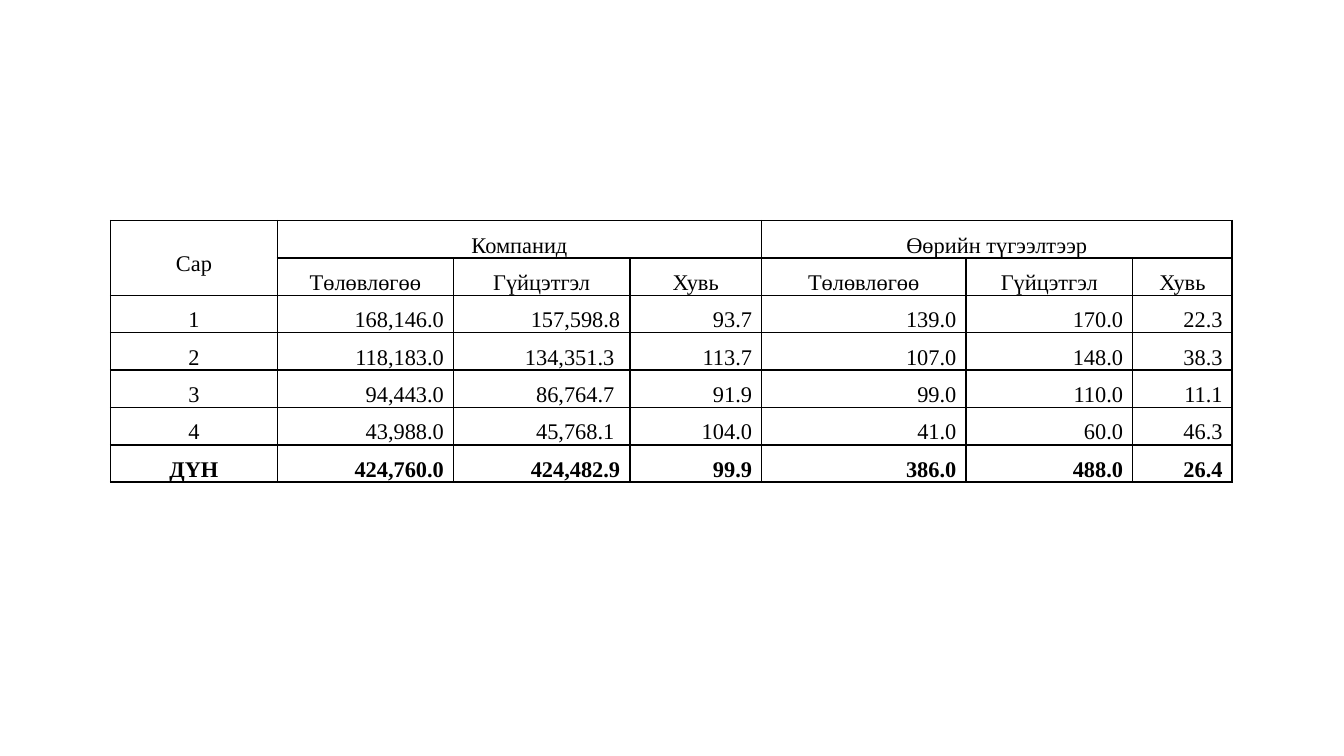
from dataclasses import dataclass

from lxml import etree
from pptx import Presentation
from pptx.dml.color import RGBColor
from pptx.enum import text
from pptx.oxml import ns
from pptx.util import Cm, Pt


@dataclass(frozen=True)
class Theme:
    font: str = "Times New Roman"
    size: int = 12
    ink: str = "000000"
    border: int = 1
    inset: float = 0.18
    figure_gap: float = 0.11
    line_spacing: float = 1.5


THEME = Theme()
COLUMN_WIDTHS = [3.15, 3.33, 3.33, 2.49, 3.86, 3.15, 1.88]
ROWS = [
    ["Сар", "Компанид", "", "", "Өөрийн түгээлтээр", "", ""],
    ["", *["Төлөвлөгөө", "Гүйцэтгэл", "Хувь"] * 2],
    ["1", "168,146.0", "157,598.8", "93.7", "139.0", "170.0", "22.3"],
    ["2", "118,183.0", "134,351.3", "113.7", "107.0", "148.0", "38.3"],
    ["3", "94,443.0", "86,764.7", "91.9", "99.0", "110.0", "11.1"],
    ["4", "43,988.0", "45,768.1", "104.0", "41.0", "60.0", "46.3"],
    ["ДҮН", "424,760.0", "424,482.9", "99.9", "386.0", "488.0", "26.4"],
]
HEADER_ROWS = 2
MERGES = [((0, 0), (1, 0)), ((0, 1), (0, 3)), ((0, 4), (0, 6))]
INDENTED_FIGURES = {(3, 2), (4, 2), (5, 2)}


def add_borders(cell):
    properties = cell._tc.get_or_add_tcPr()
    for position, side in enumerate(("lnL", "lnR", "lnT", "lnB")):
        line = etree.Element(ns.qn(f"a:{side}"), w=str(Pt(THEME.border)))
        fill = etree.SubElement(line, ns.qn("a:solidFill"))
        etree.SubElement(fill, ns.qn("a:srgbClr"), val=THEME.ink)
        properties.insert(position, line)


def fill_cell(cell, words, align, bold, gap):
    """Write and style one cell; gap widens its right inset."""
    cell.fill.background()
    add_borders(cell)
    cell.margin_left = Cm(THEME.inset)
    cell.margin_right = Cm(THEME.inset + gap)
    cell.margin_top = cell.margin_bottom = 0
    cell.vertical_anchor = text.MSO_ANCHOR.MIDDLE
    para = cell.text_frame.paragraphs[0]
    para.text = words
    para.alignment = align
    para.line_spacing = THEME.line_spacing
    para.font.size = Pt(THEME.size)
    for span in para.runs:
        span.font.name = THEME.font
        span.font.size = Pt(THEME.size)
        span.font.bold = bold
        span.font.color.rgb = RGBColor.from_string(THEME.ink)


def add_monthly_table(page, left, top, width, height):
    frame = page.shapes.add_table(len(ROWS), len(COLUMN_WIDTHS),
                                  Cm(left), Cm(top), Cm(width), Cm(height))
    table = frame.table
    table.first_row = table.horz_banding = False
    scale = width / sum(COLUMN_WIDTHS)
    for column, column_width in zip(table.columns, COLUMN_WIDTHS):
        column.width = Cm(column_width * scale)

    for r, row in enumerate(ROWS):
        for c, words in enumerate(row):
            centred = r < HEADER_ROWS or c == 0
            align = text.PP_ALIGN.CENTER if centred else text.PP_ALIGN.RIGHT
            gap = THEME.figure_gap if (r, c) in INDENTED_FIGURES else 0
            fill_cell(table.cell(r, c), words, align, r == len(ROWS) - 1, gap)
    for first, last in MERGES:
        table.cell(*first).merge(table.cell(*last))


def main():
    deck = Presentation()
    deck.slide_width, deck.slide_height = Cm(25.4), Cm(14.29)
    page = deck.slides.add_slide(deck.slide_layouts[6])
    add_monthly_table(page, left=2.09, top=4.17, width=21.2, height=4.9)
    deck.save("out.pptx")


if __name__ == "__main__":
    main()
